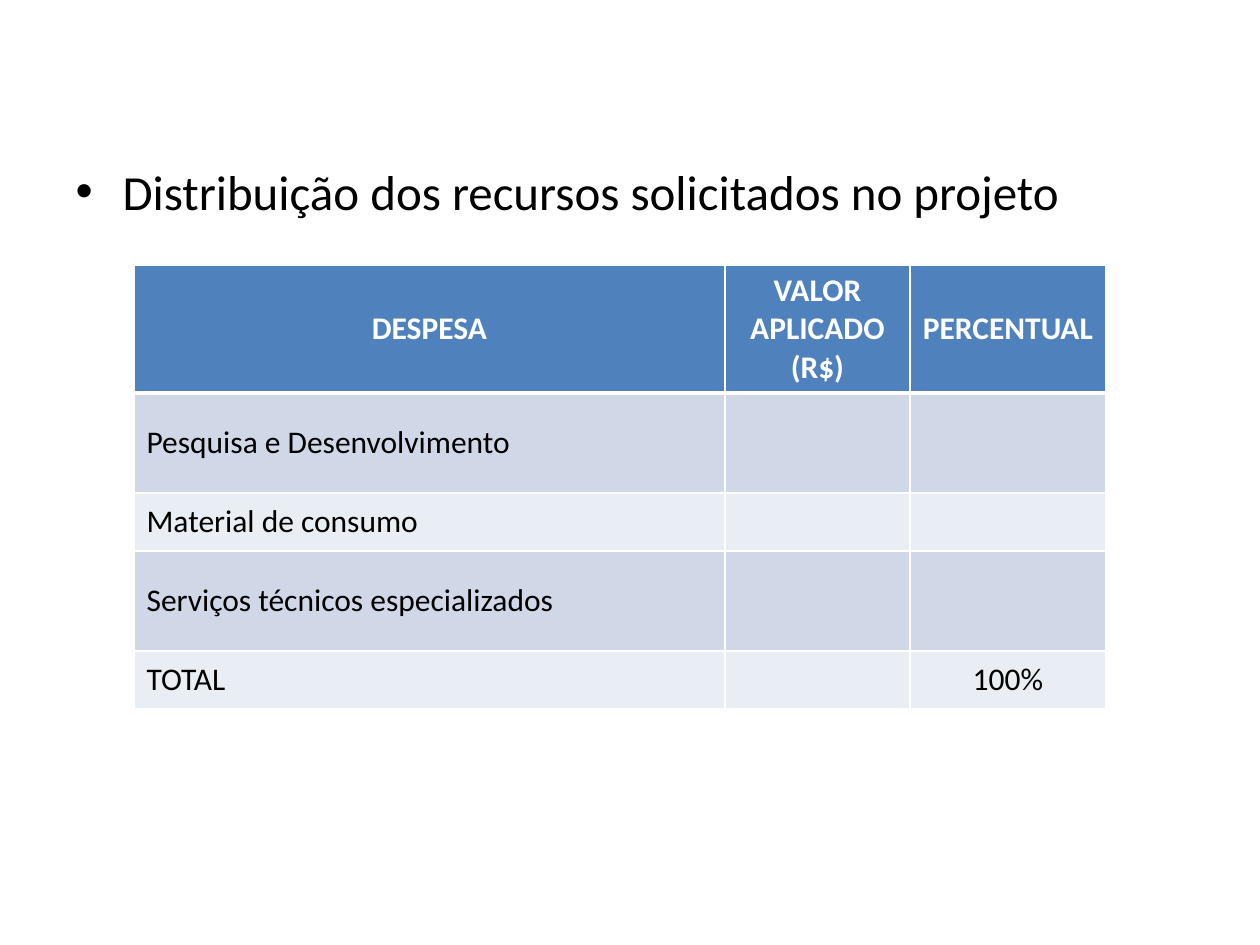
from lxml import etree
from pptx import Presentation
from pptx import util as u
from pptx.dml.color import RGBColor
from pptx.enum import text
from pptx.oxml.ns import qn

# Content
BULLET = "Distribuição dos recursos solicitados no projeto"
ROWS = [
    ("DESPESA", "VALOR APLICADO (R$)", "PERCENTUAL"),
    ("Pesquisa e Desenvolvimento", "", ""),
    ("Material de consumo", "", ""),
    ("Serviços técnicos especializados", "", ""),
    ("TOTAL", "", "100%"),
]
COLORS = {"header": "4F81BD", "odd": "D0D8E8", "even": "E9EDF4",
          "white": "FFFFFF", "black": "000000"}
FONT = "Calibri"

# Layout in px
PX = u.Inches(1) // 126
BODY = (63, 155, 1134, 689)
TABLE_LEFT, TABLE_TOP = 134, 265
COLUMN_WIDTHS = [591, 185, 196]
ROW_HEIGHTS = [126, 100, 58, 100, 58]
INDENT = 47


def add_run(paragraph, words, size, color, bold=False):
    run = paragraph.add_run()
    run.text = words
    run.font.name = FONT
    run.font.size = u.Pt(size)
    run.font.bold = bold
    run.font.color.rgb = RGBColor.from_string(COLORS[color])


def set_borders(cell, widths):
    properties = cell._tc.get_or_add_tcPr()
    for position, (side, width) in enumerate(widths.items()):
        line = etree.Element(qn(f"a:ln{side}"), w=str(u.Pt(width)))
        fill = etree.SubElement(line, qn("a:solidFill"))
        etree.SubElement(fill, qn("a:srgbClr"), val=COLORS["white"])
        properties.insert(position, line)


presentation = Presentation()
presentation.slide_width, presentation.slide_height = 1260 * PX, 945 * PX
slide = presentation.slides.add_slide(presentation.slide_layouts[1])
title, body = slide.placeholders
title.element.getparent().remove(title.element)

# Bullet line
body.left, body.top, body.width, body.height = (n * PX for n in BODY)
paragraph = body.text_frame.paragraphs[0]
properties = paragraph._p.get_or_add_pPr()
properties.set("marL", str(INDENT * PX))
properties.set("indent", str(-INDENT * PX))
etree.SubElement(properties, qn("a:buChar"), char="•")
paragraph.space_before = u.Pt(0)
add_run(paragraph, BULLET, 28, "black")

# Expense table
frame = slide.shapes.add_table(
    len(ROWS), len(COLUMN_WIDTHS), TABLE_LEFT * PX, TABLE_TOP * PX,
    sum(COLUMN_WIDTHS) * PX, sum(ROW_HEIGHTS) * PX)
table = frame.table
for column, width in zip(table.columns, COLUMN_WIDTHS):
    column.width = width * PX
for row, height in zip(table.rows, ROW_HEIGHTS):
    row.height = height * PX

for i, row in enumerate(ROWS):
    header = i == 0
    band = "header" if header else "odd" if i % 2 else "even"
    for j, words in enumerate(row):
        cell = table.cell(i, j)
        cell.fill.solid()
        cell.fill.fore_color.rgb = RGBColor.from_string(COLORS[band])
        cell.vertical_anchor = text.MSO_ANCHOR.MIDDLE
        set_borders(cell, {"L": 1, "R": 1, "T": 3 if i == 1 else 1,
                           "B": 3 if header else 1})
        paragraph = cell.text_frame.paragraphs[0]
        if header or j > 0:
            paragraph.alignment = text.PP_ALIGN.CENTER
        if words:
            add_run(paragraph, words, 18, "white" if header else "black", header)

presentation.save("out.pptx")
